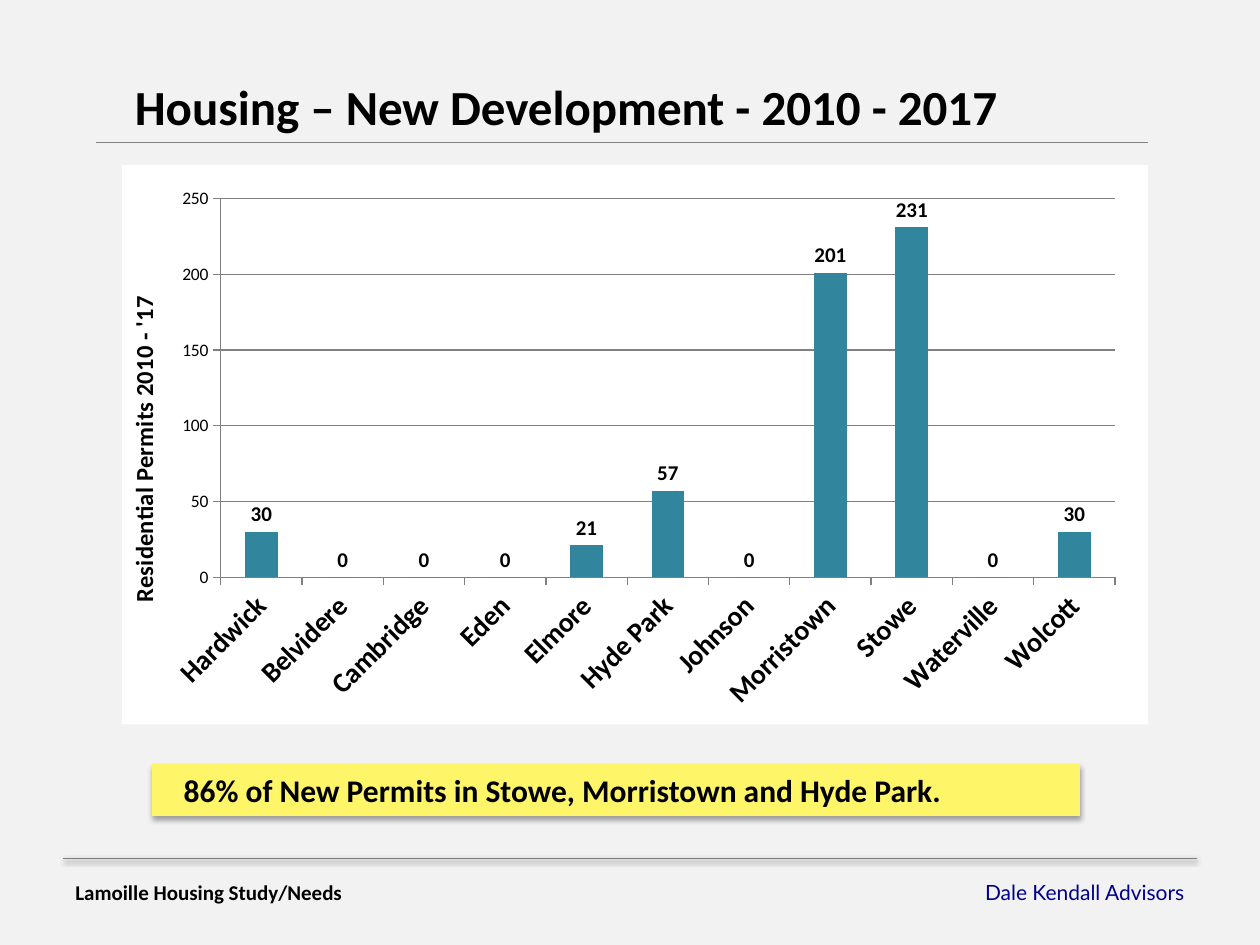
from pptx import Presentation, util as u
from pptx.chart.data import CategoryChartData
from pptx.dml.color import RGBColor
from pptx.enum import chart as charts, shapes, text
from pptx.oxml import parse_xml
from pptx.oxml.ns import nsdecls

Inches, Pt = u.Inches, u.Pt
COLORS = {
    "page": "F2F2F2", "panel": "FFFFFF", "ink": "000000", "rule": "808080",
    "bar": "31859C", "callout": "FFF569", "advisor": "000090",
}
PERMITS = {
    "Hardwick": 30, "Belvidere": 0, "Cambridge": 0, "Eden": 0, "Elmore": 21,
    "Hyde Park": 57, "Johnson": 0, "Morristown": 201, "Stowe": 231,
    "Waterville": 0, "Wolcott": 30,
}


def rgb(name):
    return RGBColor.from_string(COLORS[name])


def inches(*lengths):
    return [Inches(length) for length in lengths]


def set_font(font, size, bold=False, color="ink", name="Calibri"):
    font.size, font.bold, font.name = Pt(size), bold, name
    font.color.rgb = rgb(color)


def write(box, words, align=text.PP_ALIGN.LEFT, anchor=text.MSO_ANCHOR.TOP, **font):
    frame = box.text_frame
    frame.word_wrap = True
    frame.auto_size = text.MSO_AUTO_SIZE.SHAPE_TO_FIT_TEXT
    frame.vertical_anchor = anchor
    para = frame.paragraphs[0]
    para.alignment = align
    span = para.add_run()
    span.text = words
    set_font(span.font, **font)


def add_text(page, area, words, **style):
    write(page.shapes.add_textbox(*inches(*area)), words, **style)


def set_effects(shape, blur=0, distance=0, alpha=0):
    """Give a shape a downward shadow, or none when alpha is zero."""
    shadow = "" if not alpha else (
        f'<a:outerShdw blurRad="{Pt(blur)}" dist="{Pt(distance)}" dir="5400000" '
        f'rotWithShape="0"><a:srgbClr val="{COLORS["ink"]}">'
        f'<a:alpha val="{alpha * 1000}"/></a:srgbClr></a:outerShdw>')
    shape.element.spPr.append(parse_xml(
        f'<a:effectLst {nsdecls("a")}>{shadow}</a:effectLst>'))


def add_rule(page, left, right, y, width, **shadow):
    rule = page.shapes.add_connector(
        shapes.MSO_CONNECTOR.STRAIGHT, *inches(left, y, right, y))
    rule.line.color.rgb = rgb("rule")
    rule.line.width = Pt(width)
    set_effects(rule, **shadow)


def add_footer(page, left, top, width):
    add_rule(page, left, left + width, top, 0.5, blur=3.1, distance=1.6, alpha=38)
    box_width = 2.96
    add_text(page, (left + width - box_width, top + 0.12, box_width, 0.3),
             "Dale Kendall Advisors", align=text.PP_ALIGN.RIGHT,
             size=12, color="advisor", name="Lato")
    add_text(page, (left, top + 0.12, box_width, 0.3),
             "Lamoille Housing Study/Needs", size=12, bold=True)


def add_title(page, left, top, width, height):
    title = page.shapes.title
    title.left, title.top, title.width, title.height = inches(left, top, width, height)
    write(title, "Housing – New Development - 2010 - 2017", size=28, bold=True)
    add_rule(page, 0.76, 9.11, top + height, 1)


def add_permit_chart(page, left, top, width, height):
    permits = CategoryChartData()
    permits.categories = list(PERMITS)
    permits.add_series("Series 1", list(PERMITS.values()))
    chart = page.shapes.add_chart(
        charts.XL_CHART_TYPE.COLUMN_CLUSTERED,
        *inches(left, top, width, height), permits).chart
    chart.has_legend = chart.has_title = False
    set_font(chart.font, 10)

    # Bars and their values
    plot = chart.plots[0]
    plot.gap_width = 150
    plot.vary_by_categories = False
    bars = plot.series[0]
    bars.format.fill.solid()
    bars.format.fill.fore_color.rgb = rgb("bar")
    labels = bars.data_labels
    labels.show_value = True
    labels.position = charts.XL_LABEL_POSITION.OUTSIDE_END
    set_font(labels.font, 12, bold=True)

    # Axes
    towns, counts = chart.category_axis, chart.value_axis
    set_font(towns.tick_labels.font, 16, bold=True)
    counts.minimum_scale, counts.maximum_scale, counts.major_unit = 0, 250, 50
    counts.has_major_gridlines = True
    for part in (towns, counts, counts.major_gridlines):
        part.format.line.color.rgb = rgb("rule")
        part.format.line.width = Pt(0.75)
    for axis in (towns, counts):
        axis.major_tick_mark = charts.XL_TICK_MARK.OUTSIDE
    span = counts.axis_title.text_frame.paragraphs[0].add_run()
    span.text = "Residential Permits 2010 - '17"
    set_font(span.font, 14, bold=True)

    # Slanted town names, white panel and fixed plot area
    root = chart.element
    root.xpath(".//c:catAx/c:txPr/a:bodyPr")[0].set("rot", "-2700000")
    root.xpath("c:chart")[0].addnext(parse_xml(
        f'<c:spPr {nsdecls("c", "a")}><a:solidFill><a:srgbClr val="{COLORS["panel"]}"/>'
        '</a:solidFill><a:ln><a:noFill/></a:ln></c:spPr>'))
    area = root.xpath(".//c:plotArea")[0]
    for old in area.xpath("c:layout"):
        area.remove(old)
    places = {"layoutTarget": "inner", "xMode": "edge", "yMode": "edge",
              "x": 0.096, "y": 0.06, "w": 0.872, "h": 0.677}
    layout = "".join(f'<c:{key} val="{value}"/>' for key, value in places.items())
    area.insert(0, parse_xml(
        f'<c:layout {nsdecls("c")}><c:manualLayout>{layout}</c:manualLayout></c:layout>'))


def add_callout(page, left, top, width, height):
    band = page.shapes.add_shape(
        shapes.MSO_SHAPE.RECTANGLE, *inches(left, top, width, height))
    band.fill.solid()
    band.fill.fore_color.rgb = rgb("callout")
    band.line.color.rgb = rgb("callout")
    band.line.width = Pt(0.75)
    set_effects(band, blur=3.1, distance=1.8, alpha=35)
    indent = 0.15
    add_text(page, (left + indent, top, width - indent, height),
             "86% of New Permits in Stowe, Morristown and Hyde Park.",
             size=18, bold=True)


def main():
    deck = Presentation()
    deck.slide_width, deck.slide_height = inches(10, 7.5)
    page = deck.slides.add_slide(deck.slide_layouts.get_by_name("Title Only"))
    page.background.fill.solid()
    page.background.fill.fore_color.rgb = rgb("page")
    add_footer(page, 0.5, 6.81, 9)
    add_title(page, 0.97, 0.56, 7.5, 0.57)
    add_permit_chart(page, 0.97, 1.31, 8.14, 4.44)
    add_callout(page, 1.21, 6.07, 7.36, 0.4)
    deck.save("out.pptx")


if __name__ == "__main__":
    main()
